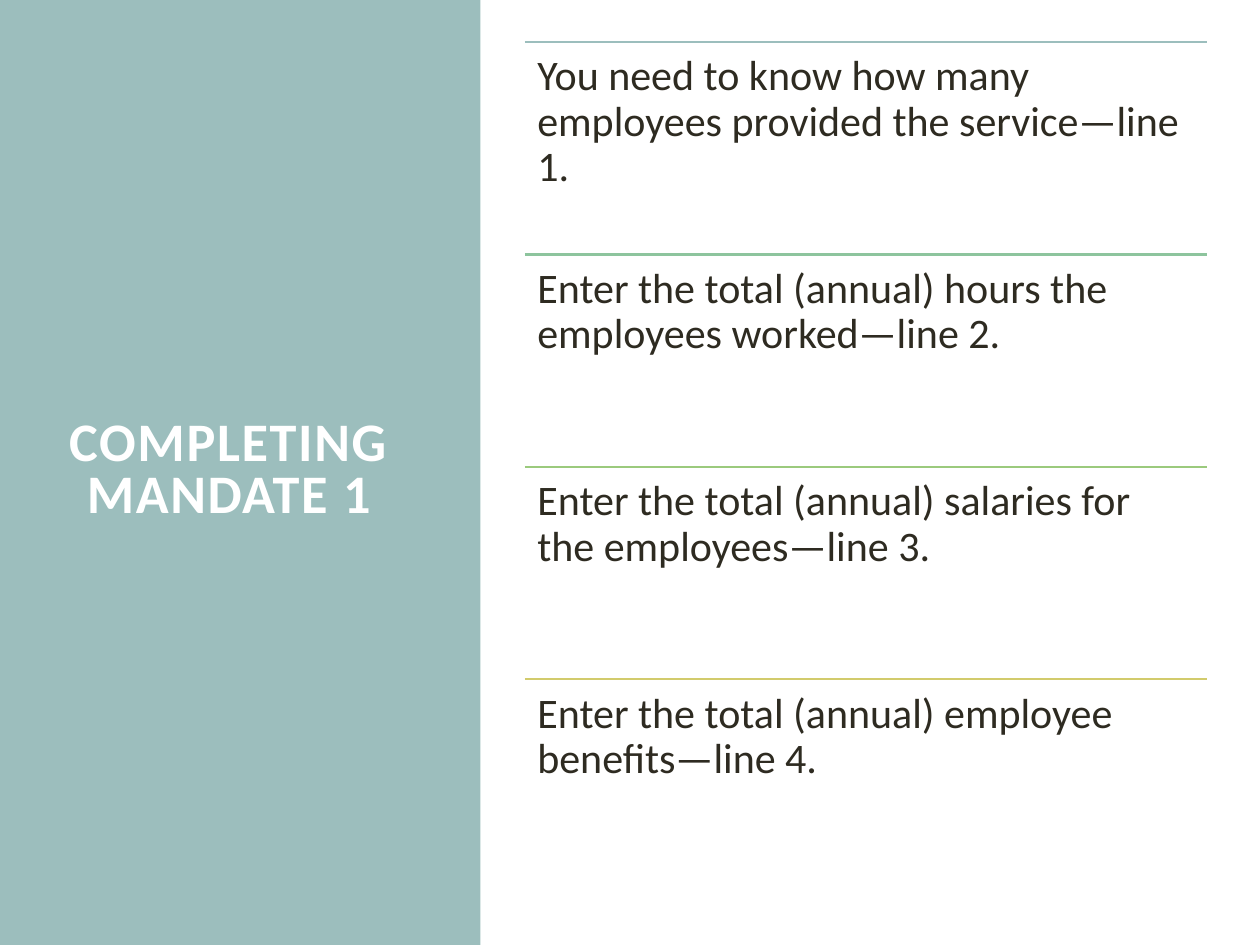
from dataclasses import dataclass

from lxml import etree
from pptx import Presentation
from pptx.dml.color import RGBColor
from pptx.enum.shapes import MSO_CONNECTOR, MSO_SHAPE
from pptx.enum.text import MSO_ANCHOR, PP_ALIGN
from pptx.oxml.ns import qn
from pptx.util import Pt

RECT = MSO_SHAPE.RECTANGLE
STRAIGHT = MSO_CONNECTOR.STRAIGHT
TOP, MIDDLE = MSO_ANCHOR.TOP, MSO_ANCHOR.MIDDLE
LEFT, CENTER = PP_ALIGN.LEFT, PP_ALIGN.CENTER


@dataclass(frozen=True)
class Theme:
    font: str = "Calibri"
    panel: str = "9CBEBD"
    title: str = "FFFFFF"
    body: str = "2E2B21"
    rules: tuple = ("9CBEBD", "8DC49D", "9BCA7D", "D2CB6C")
    title_size: float = 31
    body_size: float = 24
    rule_width: float = 1.25


class SlideBuilder:
    def __init__(self, slide, theme):
        self.shapes = slide.shapes
        self.theme = theme

    def panel(self, x, y, w, h, color):
        sp = self.shapes.add_shape(RECT, Pt(x), Pt(y), Pt(w), Pt(h))
        sp.shadow.inherit = False
        sp.fill.solid()
        sp.fill.fore_color.rgb = RGBColor.from_string(color)
        sp.line.fill.background()

    def rule(self, x, y, w, color):
        line = self.shapes.add_connector(STRAIGHT, Pt(x), Pt(y), Pt(x + w), Pt(y))
        line.line.color.rgb = RGBColor.from_string(color)
        line.line.width = Pt(self.theme.rule_width)
        etree.SubElement(line._element.spPr, qn("a:effectLst"))

    def text(self, x, y, w, h, text, color, font, paragraph, anchor=TOP, tracking=0):
        """Add a text box; tracking is the letter spacing in points."""
        tf = self.shapes.add_textbox(Pt(x), Pt(y), Pt(w), Pt(h)).text_frame
        tf.word_wrap = True
        tf.vertical_anchor = anchor
        for side in ("left", "top", "right", "bottom"):
            setattr(tf, f"margin_{side}", Pt(7.2))
        p = tf.paragraphs[0]
        for name, value in paragraph.items():
            setattr(p, name, value)
        r = p.add_run()
        r.text = text
        for name, value in {"name": self.theme.font, **font}.items():
            setattr(r.font, name, value)
        r.font.color.rgb = RGBColor.from_string(color)
        if tracking:
            r._r.get_or_add_rPr().set("spc", str(tracking * 100))


STEPS = (
    "You need to know how many employees provided the service—line 1.",
    "Enter the total (annual) hours the employees worked—line 2.",
    "Enter the total (annual) salaries for the employees—line 3.",
    "Enter the total (annual) employee benefits—line 4.",
)
SLIDE_W, SLIDE_H = 720, 540
PANEL_W = 274.5
STEP_X, STEP_Y, STEP_W, STEP_H = 300, 24, 390, 121.4


def main():
    prs = Presentation()
    prs.slide_width, prs.slide_height = Pt(SLIDE_W), Pt(SLIDE_H)
    theme = Theme()
    s = SlideBuilder(prs.slides.add_slide(prs.slide_layouts[6]), theme)

    s.panel(0, 0, PANEL_W, SLIDE_H, theme.panel)
    s.text(30, 50.4, 201.6, 438.5, "COMPLETING MANDATE 1", theme.title,
           {"size": Pt(theme.title_size), "bold": True},
           {"alignment": CENTER, "line_spacing": 0.8}, MIDDLE, tracking=1)

    for i, (step, color) in enumerate(zip(STEPS, theme.rules)):
        y = STEP_Y + i * STEP_H
        s.rule(STEP_X, y, STEP_W, color)
        s.text(STEP_X, y, STEP_W, STEP_H, step, theme.body,
               {"size": Pt(theme.body_size)},
               {"alignment": LEFT, "line_spacing": 0.9})

    prs.save("out.pptx")


if __name__ == "__main__":
    main()
